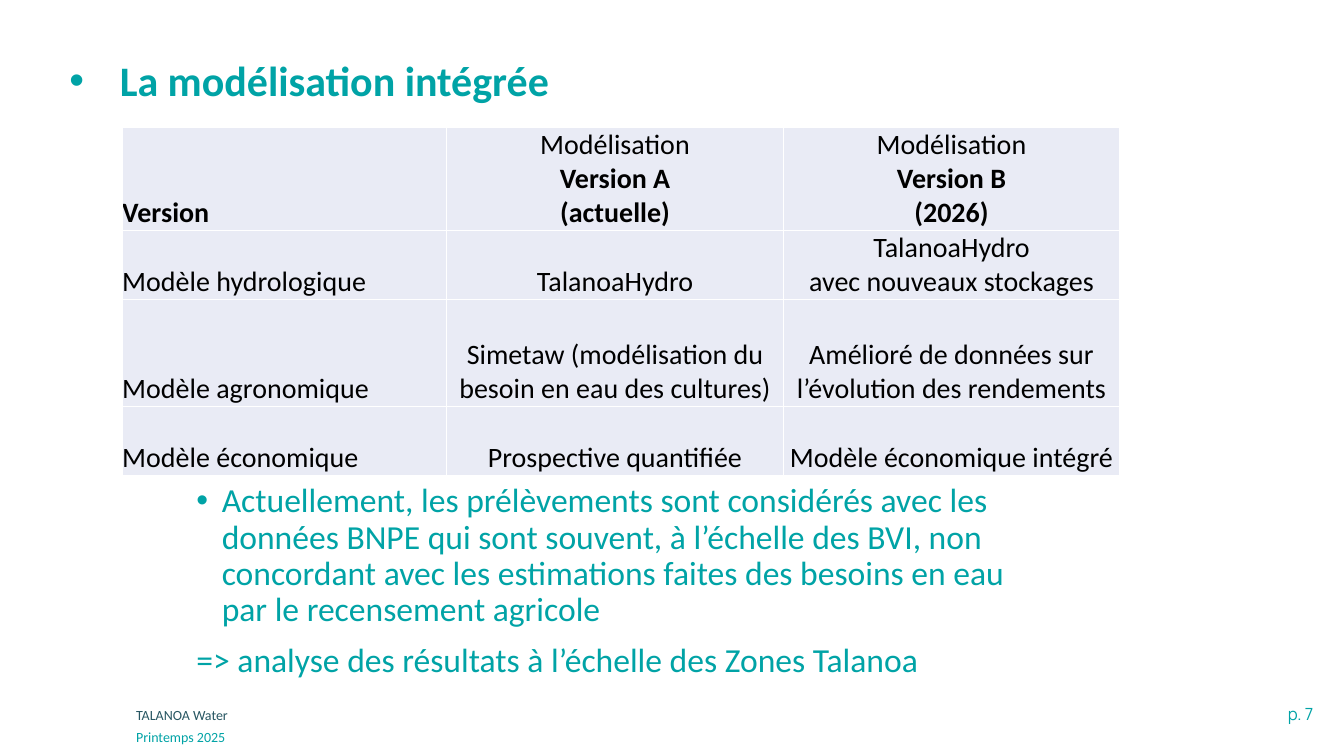
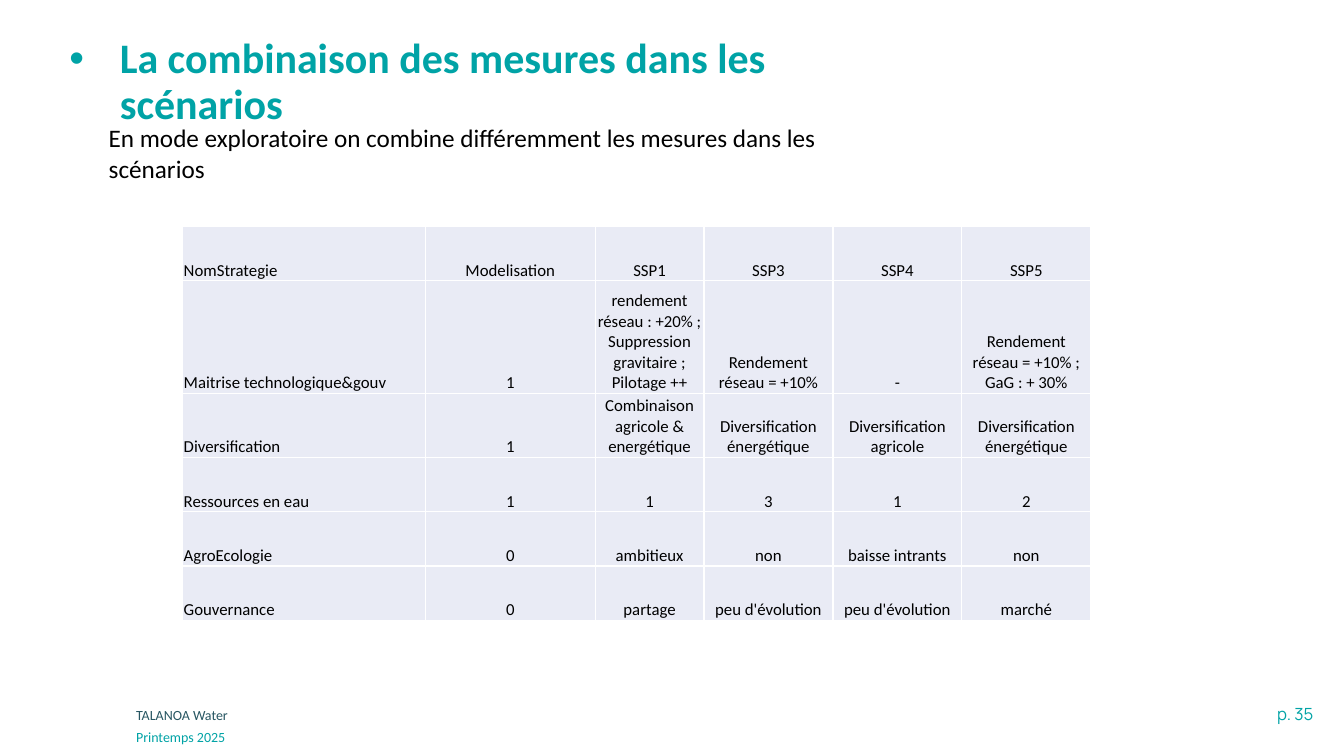
"""Build two slides on integrated modelling and scenario measures."""
from dataclasses import dataclass

from lxml.etree import SubElement as Sub
from pptx import Presentation
from pptx.dml.color import RGBColor as Rgb
from pptx.enum.text import MSO_ANCHOR as Anchor, PP_ALIGN as Align
from pptx.oxml.ns import qn
from pptx.util import Cm, Pt


@dataclass(frozen=True)
class Theme:
    teal: str = "00A3A6"
    slate: str = "275662"
    black: str = "000000"
    white: str = "FFFFFF"
    pale: str = "E9EBF5"
    font: str = "Calibri"
    light: str = "Manrope"
    head: int = 30
    body: int = 24
    note: int = 18
    page: int = 12
    foot: int = 10


T = Theme()


def write(frame, text, size, color, font=T.font, bold=False, align=Align.LEFT):
    frame.text = text
    frame.word_wrap = True
    for para in frame.paragraphs:
        para.alignment = align
        for run in para.runs:
            run.font.name = font
            run.font.size = Pt(size)
            run.font.bold = bold
            run.font.color.rgb = Rgb.from_string(color)


def bullet(para, indent):
    props = para._p.get_or_add_pPr()
    props.set("marL", str(Cm(indent)))
    props.set("indent", str(-Cm(indent)))
    Sub(props, qn("a:buFont"), typeface="Arial")
    Sub(props, qn("a:buChar"), char="•")


models = [
    ["Version", "Modélisation\nVersion A\n(actuelle)", "Modélisation\nVersion B\n(2026)"],
    ["Modèle hydrologique", "TalanoaHydro", "TalanoaHydro\navec nouveaux stockages"],
    ["Modèle agronomique", "Simetaw (modélisation du besoin en eau des cultures)",
     "Amélioré de données sur l’évolution des rendements"],
    ["Modèle économique", "Prospective quantifiée", "Modèle économique intégré"],
]
plans = [
    ["NomStrategie", "Modelisation", "SSP1", "SSP3", "SSP4", "SSP5"],
    ["Maitrise technologique&gouv", "1",
     "rendement réseau : +20% ;\nSuppression gravitaire ;\nPilotage ++",
     "Rendement réseau = +10%", "-", "Rendement réseau = +10% ; GaG : + 30%"],
    ["Diversification", "1", "Combinaison agricole & energétique",
     "Diversification énergétique", "Diversification agricole", "Diversification énergétique"],
    ["Ressources en eau", "1", "1", "3", "1", "2"],
    ["AgroEcologie", "0", "ambitieux", "non", "baisse intrants", "non"],
    ["Gouvernance", "0", "partage", "peu d'évolution", "peu d'évolution", "marché"],
]
pages = [
    dict(title="La modélisation intégrée", page="p. 7", rows=models, left=3.08, top=3.2,
         wide=[8.18, 8.48, 8.48], high=[2.6, 1.74, 2.7, 1.74], size=20, pad=0, bold=True),
    dict(title="La combinaison des mesures dans les scénarios", page="p. 35", rows=plans,
         left=4.6, top=5.7, wide=[6.12, 4.28, 2.74] + [3.25] * 3,
         high=[1.37, 2.84, 1.61] + [1.37] * 3, size=12, pad=0.03, bold=False),
]

deck = Presentation()
deck.slide_width, deck.slide_height = Cm(33.87), Cm(19.05)
slides = []

for data in pages:
    slide = deck.slides.add_slide(deck.slide_layouts[5])
    slides.append(slide)

    title = slide.shapes.title
    title.left, title.top, title.width, title.height = Cm(1.75), Cm(1.02), Cm(21.89), Cm(2.13)
    frame = title.text_frame
    write(frame, data["title"], T.head, T.teal, bold=True)
    frame.margin_left = 0
    frame.vertical_anchor = Anchor.MIDDLE
    frame.paragraphs[0].line_spacing = 0.9
    bullet(frame.paragraphs[0], 1.27)

    feet = [
        (27.56, 17.6, 5.79, data["page"], T.page, T.teal, T.light, Align.RIGHT),
        (3.18, 17.68, 18.64, "TALANOA Water", T.foot, T.slate, T.font, Align.LEFT),
        (3.18, 18.24, 18.64, "Printemps 2025", T.foot, T.teal, T.font, Align.LEFT),
    ]
    for left, top, width, text, size, color, font, align in feet:
        box = slide.shapes.add_textbox(Cm(left), Cm(top), Cm(width), Cm(0.75))
        write(box.text_frame, text, size, color, font, align=align)

    rows, wide, high = data["rows"], data["wide"], data["high"]
    grid = slide.shapes.add_table(len(rows), len(wide), Cm(data["left"]), Cm(data["top"]),
                                  Cm(sum(wide)), Cm(sum(high))).table
    grid.first_row = grid.horz_banding = False
    for col, width in zip(grid.columns, wide):
        col.width = Cm(width)
    for r, row in enumerate(rows):
        grid.rows[r].height = Cm(high[r])
        for c, text in enumerate(row):
            cell = grid.cell(r, c)
            cell.margin_left = cell.margin_right = cell.margin_top = Cm(data["pad"])
            cell.margin_bottom = 0
            cell.vertical_anchor = Anchor.BOTTOM
            write(cell.text_frame, text, data["size"], T.black,
                  bold=data["bold"] and r == 0, align=Align.CENTER if c else Align.LEFT)
            if data["bold"] and r == 0 and c:
                cell.text_frame.paragraphs[0].runs[0].font.bold = False
            props = cell._tc.get_or_add_tcPr()
            for side in ("lnL", "lnR", "lnT", "lnB"):
                line = Sub(props, qn("a:" + side), w=str(Pt(1)))
                Sub(Sub(line, qn("a:solidFill")), qn("a:srgbClr"), val=T.white)
            cell.fill.solid()
            cell.fill.fore_color.rgb = Rgb.from_string(T.pale)

body = slides[0].shapes.add_textbox(Cm(4.7), Cm(12.07), Cm(21.89), Cm(5.4)).text_frame
write(body, "Actuellement, les prélèvements sont considérés avec les données BNPE qui sont "
      "souvent, à l’échelle des BVI, non concordant avec les estimations faites des besoins "
      "en eau par le recensement agricole\n"
      "=> analyse des résultats à l’échelle des Zones Talanoa", T.body, T.teal)
for para in body.paragraphs:
    para.line_spacing = 0.9
bullet(body.paragraphs[0], 0.64)
body.paragraphs[1].space_before = Pt(10)

note = slides[1].shapes.add_textbox(Cm(2.49), Cm(2.97), Cm(18.72), Cm(1.8)).text_frame
write(note, "En mode exploratoire on combine différemment les mesures dans les scénarios",
      T.note, T.black)

deck.save("out.pptx")
